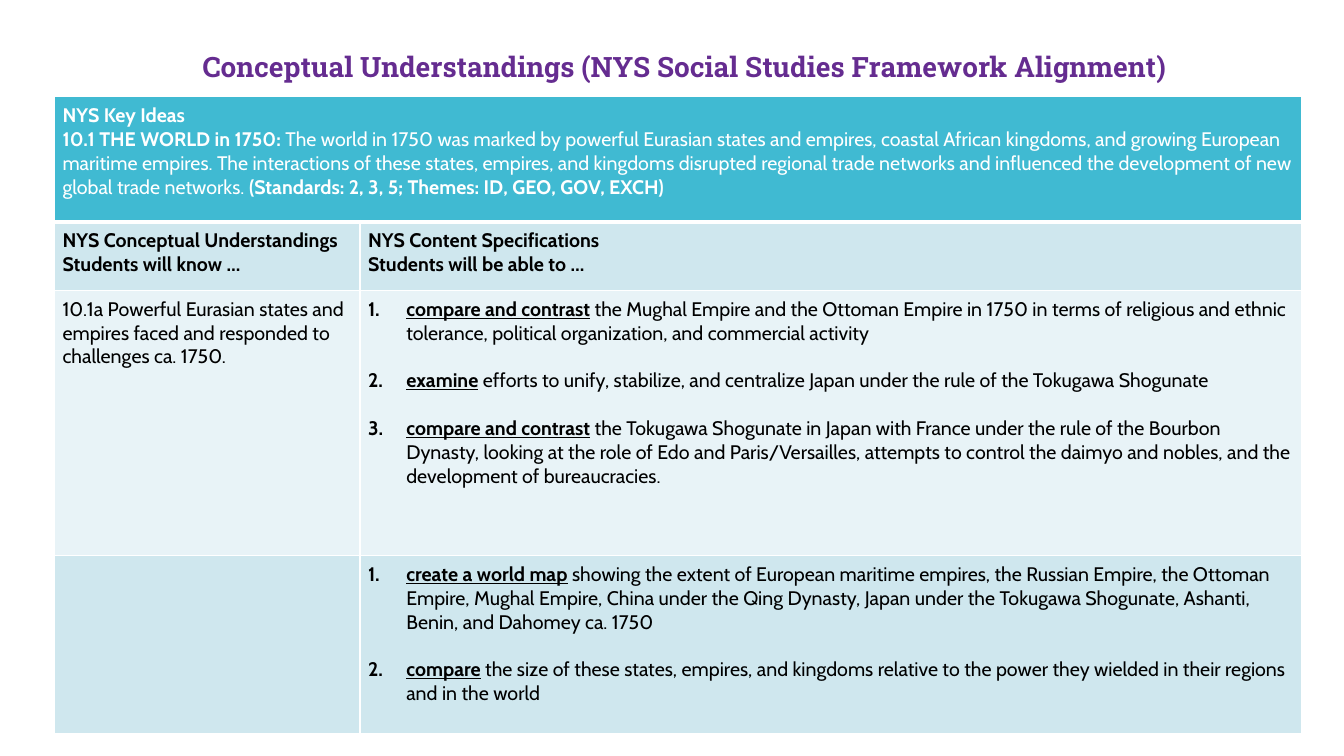
from dataclasses import dataclass

import pptx
import pptx.dml.color
import pptx.enum.text
import pptx.oxml.ns
import pptx.presentation
import pptx.slide
import pptx.table
import pptx.text.text
import pptx.util
from lxml import etree

Inches = pptx.util.Inches
Pt = pptx.util.Pt

WHITE = "FFFFFF"
BLACK = "000000"
PURPLE = "652C90"
TURQUOISE = "40BAD2"
LIGHT_BLUE = "CFE7EE"
PALE_BLUE = "E8F3F7"
COLUMN_WIDTHS = (3.03, 9.34)
ROW_HEIGHTS = (1.24, 0.68, 2.63, 1.77)


@dataclass
class Line:
    bold: str = ""
    regular: str = ""
    bold_end: str = ""


@dataclass
class CellContent:
    row: int
    column: int
    fill: str
    lines: list[Line]
    color: str = BLACK
    numbered: bool = False


CELLS = [
    CellContent(0, 0, TURQUOISE, [
        Line("NYS Key Ideas"),
        Line("10.1 THE WORLD in 1750:",
             " The world in 1750 was marked by powerful Eurasian states and empires, coastal "
             "African kingdoms, and growing European maritime empires. The interactions of these "
             "states, empires, and kingdoms disrupted regional trade networks and influenced the "
             "development of new global trade networks.",
             " (Standards: 2, 3, 5; Themes: ID, GEO, GOV, EXCH)"),
    ], color=WHITE),
    CellContent(0, 1, TURQUOISE, []),
    CellContent(1, 0, LIGHT_BLUE, [
        Line("NYS Conceptual Understandings"), Line("Students will know …")]),
    CellContent(1, 1, LIGHT_BLUE, [
        Line("NYS Content Specifications"), Line("Students will be able to …")]),
    CellContent(2, 0, PALE_BLUE, [
        Line(regular="10.1a Powerful Eurasian states and empires faced and responded to "
                     "challenges ca. 1750.")]),
    CellContent(2, 1, PALE_BLUE, [
        Line("compare and contrast",
             " the Mughal Empire and the Ottoman Empire in 1750 in terms of religious and ethnic "
             "tolerance, political organization, and commercial activity"),
        Line("examine",
             " efforts to unify, stabilize, and centralize Japan under the rule of the Tokugawa "
             "Shogunate"),
        Line("compare and contrast",
             " the Tokugawa Shogunate in Japan with France under the rule of the Bourbon Dynasty, "
             "looking at the role of Edo and Paris/Versailles, attempts to control the daimyo and "
             "nobles, and the development of bureaucracies."),
    ], numbered=True),
    CellContent(3, 0, LIGHT_BLUE, []),
    CellContent(3, 1, LIGHT_BLUE, [
        Line("create a world map",
             " showing the extent of European maritime empires, the Russian Empire, the Ottoman "
             "Empire, Mughal Empire, China under the Qing Dynasty, Japan under the Tokugawa "
             "Shogunate, Ashanti, Benin, and Dahomey ca. 1750"),
        Line("compare",
             " the size of these states, empires, and kingdoms relative to the power they wielded "
             "in their regions and in the world"),
    ], numbered=True),
]


def rgb(color: str) -> pptx.dml.color.RGBColor:
    return pptx.dml.color.RGBColor.from_string(color)


def add_text(paragraph: pptx.text.text._Paragraph, text: str, *, color: str,
             font: str = "Cabin", size: float = 14, bold: bool = False,
             underline: bool = False) -> None:
    run = paragraph.add_run()
    run.text = text
    run.font.name = font
    run.font.size = Pt(size)
    run.font.bold = bold
    run.font.underline = underline
    run.font.color.rgb = rgb(color)


def number_paragraph(paragraph: pptx.text.text._Paragraph) -> None:
    properties = paragraph._p.get_or_add_pPr()
    properties.set("marL", str(Inches(0.38)))
    properties.set("indent", str(-Inches(0.38)))
    etree.SubElement(properties, pptx.oxml.ns.qn("a:buAutoNum"), type="arabicPeriod")


def set_borders(cell: pptx.table._Cell, widths: dict[str, float]) -> None:
    properties = cell._tc.get_or_add_tcPr()
    for position, (side, width) in enumerate(widths.items()):
        border = etree.Element(pptx.oxml.ns.qn(f"a:ln{side}"), w=str(Pt(width)))
        fill = etree.SubElement(border, pptx.oxml.ns.qn("a:solidFill"))
        etree.SubElement(fill, pptx.oxml.ns.qn("a:srgbClr"), val=WHITE)
        properties.insert(position, border)


def fill_cell(cell: pptx.table._Cell, content: CellContent) -> None:
    cell.margin_left = cell.margin_right = Inches(0.08)
    cell.margin_top = cell.margin_bottom = Inches(0.07)
    cell.fill.solid()
    cell.fill.fore_color.rgb = rgb(content.fill)
    top = 3 if content.row == 1 else 1
    bottom = 3 if content.row == 0 else 1
    set_borders(cell, {"L": 1, "R": 1, "T": top, "B": bottom})
    for index, line in enumerate(content.lines):
        frame = cell.text_frame
        paragraph = frame.add_paragraph() if index else frame.paragraphs[0]
        if content.numbered:
            number_paragraph(paragraph)
            if index:
                paragraph.space_before = Pt(17)
        if line.bold:
            add_text(paragraph, line.bold, color=content.color, bold=True,
                     underline=content.numbered)
        if line.regular:
            add_text(paragraph, line.regular, color=content.color)
        if line.bold_end:
            add_text(paragraph, line.bold_end, color=content.color, bold=True)


def add_framework_table(slide: pptx.slide.Slide) -> None:
    shape = slide.shapes.add_table(
        len(ROW_HEIGHTS), len(COLUMN_WIDTHS), Inches(0.54), Inches(0.96),
        Inches(sum(COLUMN_WIDTHS)), Inches(sum(ROW_HEIGHTS)))
    table = shape.table
    table.first_row = False
    table.horz_banding = False
    for column, width in zip(table.columns, COLUMN_WIDTHS):
        column.width = Inches(width)
    for row, height in zip(table.rows, ROW_HEIGHTS):
        row.height = Inches(height)
    table.cell(0, 0).merge(table.cell(0, 1))
    for content in CELLS:
        fill_cell(table.cell(content.row, content.column), content)


def add_title(slide: pptx.slide.Slide) -> None:
    shape = slide.shapes.add_textbox(Inches(0.35), Inches(0.44), Inches(12.88), Inches(0.44))
    frame = shape.text_frame
    frame.word_wrap = True
    frame.auto_size = pptx.enum.text.MSO_AUTO_SIZE.SHAPE_TO_FIT_TEXT
    paragraph = frame.paragraphs[0]
    paragraph.alignment = pptx.enum.text.PP_ALIGN.CENTER
    add_text(paragraph, "Conceptual Understandings (NYS Social Studies Framework Alignment)",
             color=PURPLE, font="Roboto Slab", size=20, bold=True)


def main() -> None:
    presentation = pptx.Presentation()
    presentation.slide_width = Inches(13.33)
    presentation.slide_height = Inches(7.5)
    slide = presentation.slides.add_slide(presentation.slide_layouts[6])
    add_framework_table(slide)
    add_title(slide)
    presentation.save("out.pptx")


if __name__ == "__main__":
    main()
